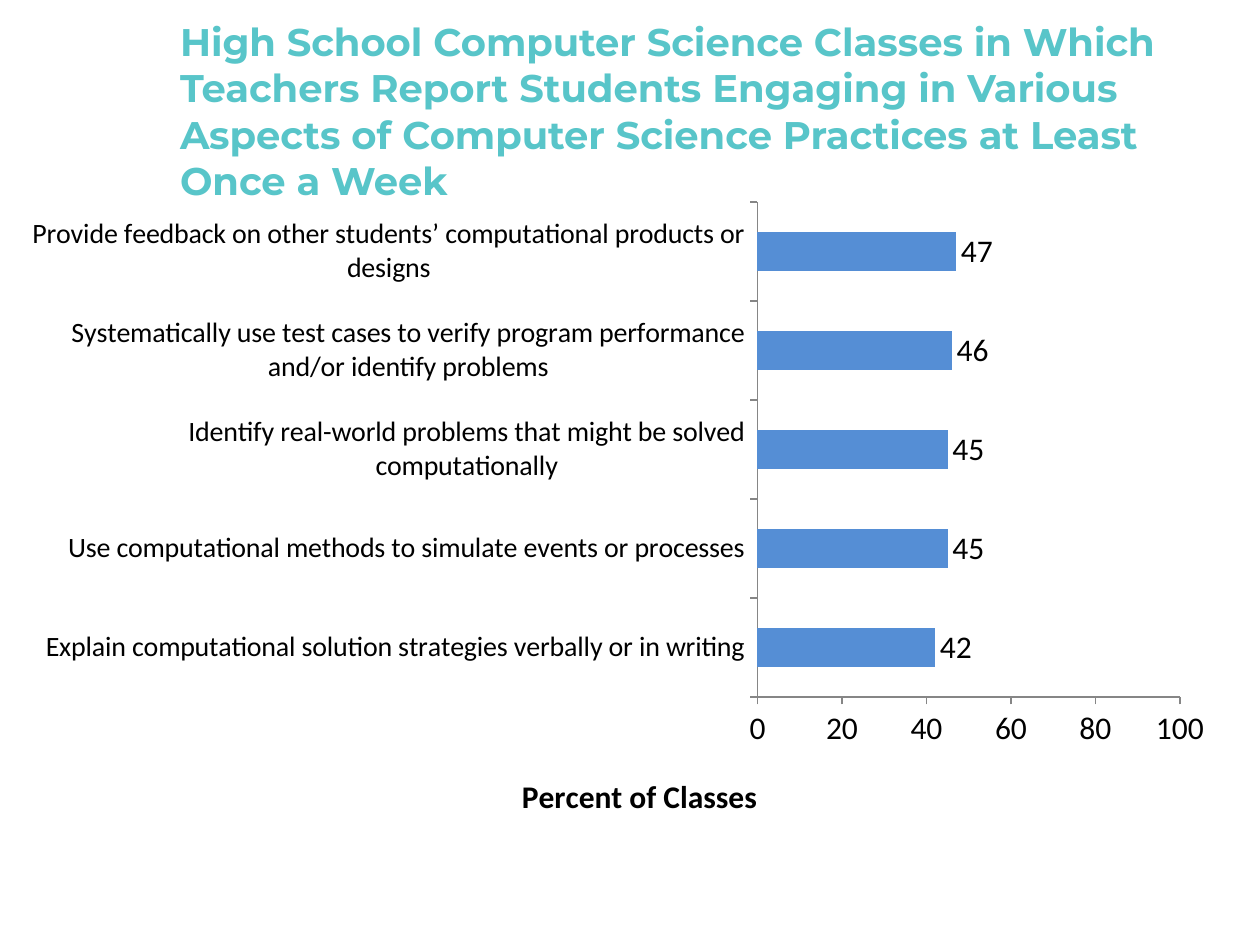
import pptx
import pptx.chart.data
import pptx.dml.color
import pptx.enum.chart
import pptx.enum.text
import pptx.oxml
import pptx.oxml.ns
import pptx.util
from pptx.util import Cm

# Content
HEADING = ("High School Computer Science Classes in Which Teachers Report Students "
           "Engaging in Various Aspects of Computer Science Practices at Least Once a Week")
AXIS_TITLE = "Percent of Classes"
PRACTICES = [  # bottom bar first
    ("Explain computational solution strategies verbally or in writing", 42),
    ("Use computational methods to simulate events or processes", 45),
    ("Identify real-world problems that might be solved computationally", 45),
    ("Systematically use test cases to verify program performance and/or identify problems", 46),
    ("Provide feedback on other students’ computational products or designs", 47),
]
COLORS = {"heading": "58C5C9", "bar": "558ED5", "text": "000000", "axis": "868686"}


def rgb(key):
    return pptx.dml.color.RGBColor.from_string(COLORS[key])


def style_font(font, size, color, name, bold=False):
    font.size = pptx.util.Pt(size)
    font.color.rgb = rgb(color)
    font.name = name
    font.bold = bold


def set_layout(parent, index, **settings):
    """Place a chart part by fractions of the chart area."""
    for old in parent.findall(pptx.oxml.ns.qn("c:layout")):
        parent.remove(old)
    entries = "".join(f'<c:{tag} val="{value}"/>' for tag, value in settings.items())
    parent.insert(index, pptx.oxml.parse_xml(
        f'<c:layout {pptx.oxml.ns.nsdecls("c")}><c:manualLayout>{entries}'
        "</c:manualLayout></c:layout>"))


presentation = pptx.Presentation()
presentation.slide_width, presentation.slide_height = Cm(25.4), Cm(19.05)
slide = presentation.slides.add_slide(presentation.slide_layouts[6])

# Bar chart
chart_data = pptx.chart.data.CategoryChartData()
chart_data.categories = [practice for practice, _ in PRACTICES]
chart_data.add_series("Series 1", [percent for _, percent in PRACTICES])
chart = slide.shapes.add_chart(
    pptx.enum.chart.XL_CHART_TYPE.BAR_CLUSTERED,
    Cm(0.43), Cm(3.81), Cm(24.33), Cm(13.13), chart_data).chart
chart.has_legend = False
chart.has_title = False
style_font(chart.font, 18, "text", "Calibri")

bars = chart.plots[0]
bars.gap_width = 150
bars.vary_by_categories = False
bars.series[0].format.fill.solid()
bars.series[0].format.fill.fore_color.rgb = rgb("bar")
bars.has_data_labels = True
bars.data_labels.show_value = True
bars.data_labels.position = pptx.enum.chart.XL_LABEL_POSITION.OUTSIDE_END
style_font(bars.data_labels.font, 18, "text", "Calibri")

# Axes
practice_axis, percent_axis = chart.category_axis, chart.value_axis
for axis, size in ((practice_axis, 16), (percent_axis, 18)):
    axis.has_major_gridlines = False
    axis.major_tick_mark = pptx.enum.chart.XL_TICK_MARK.OUTSIDE
    axis.minor_tick_mark = pptx.enum.chart.XL_TICK_MARK.NONE
    axis.format.line.color.rgb = rgb("axis")
    axis.format.line.width = pptx.util.Pt(0.75)
    style_font(axis.tick_labels.font, size, "text", "Calibri")
percent_axis.minimum_scale, percent_axis.maximum_scale = 0, 100
percent_axis.major_unit = 20
percent_label = percent_axis.axis_title.text_frame
percent_label.text = AXIS_TITLE
style_font(percent_label.paragraphs[0].runs[0].font, 18, "text", "Calibri", bold=True)

# Plot and axis title positions
plot_area = chart.element.find(".//" + pptx.oxml.ns.qn("c:plotArea"))
axis_title = plot_area.find(".//" + pptx.oxml.ns.qn("c:title"))
set_layout(plot_area, 0, layoutTarget="inner", xMode="edge", yMode="edge",
           x=0.61, y=0.02, w=0.35, h=0.76)
set_layout(axis_title, 1, xMode="edge", yMode="edge", x=0.41, y=0.89)

# Heading
heading = slide.shapes.add_textbox(Cm(3.38), Cm(0.64), Cm(20.75), Cm(3.18)).text_frame
heading.word_wrap = True
heading.vertical_anchor = pptx.enum.text.MSO_ANCHOR.MIDDLE
heading.text = HEADING
style_font(heading.paragraphs[0].runs[0].font, 22, "heading", "Montserrat", bold=True)

presentation.save("out.pptx")
